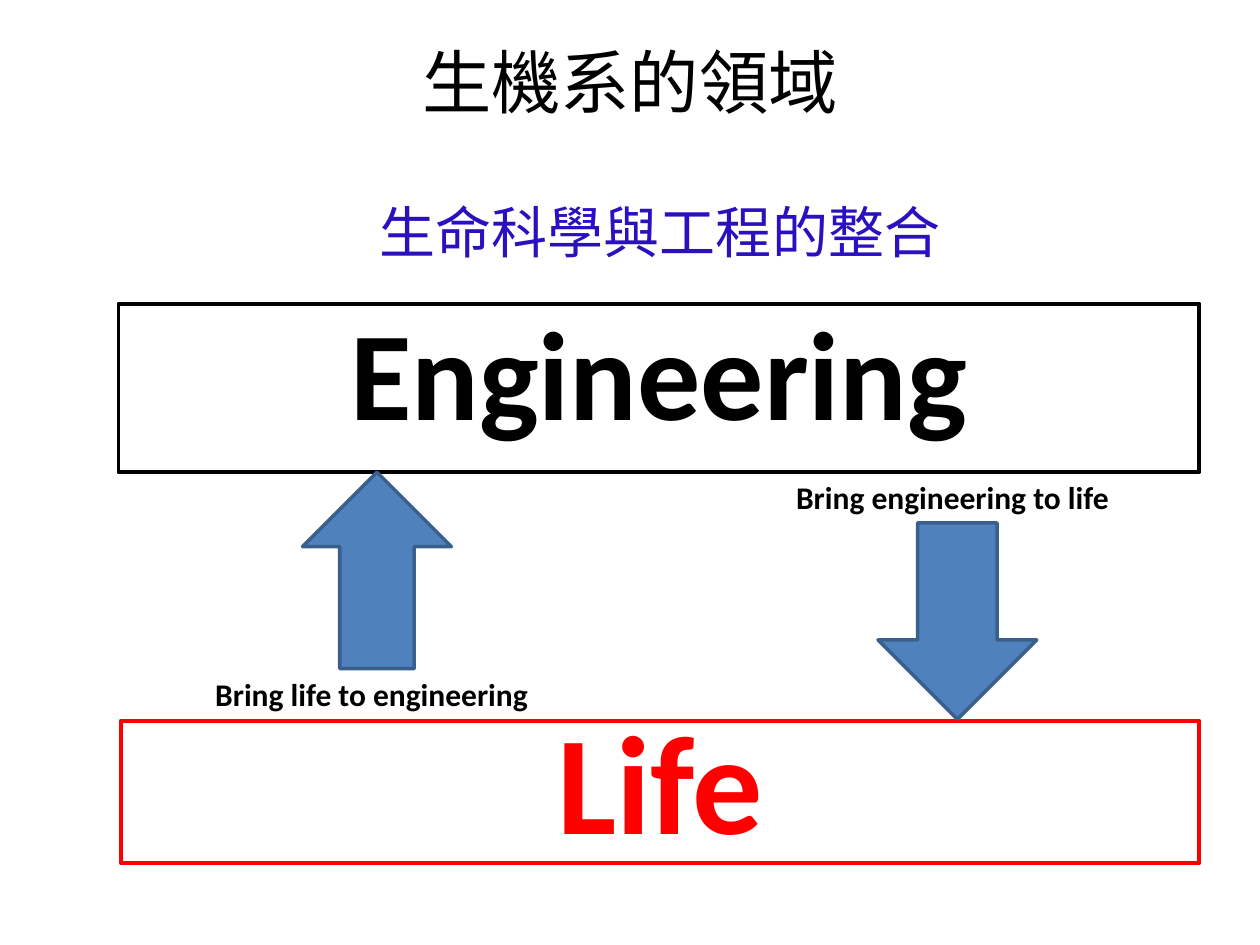
"""Build the slide on how life science and engineering are integrated."""
from lxml.etree import SubElement
from pptx import Presentation
from pptx.dml.color import RGBColor
from pptx.enum.shapes import MSO_SHAPE
from pptx.enum.text import MSO_ANCHOR, PP_ALIGN
from pptx.oxml.ns import qn
from pptx.util import Cm, Pt

COLORS = {
    "black": "000000",
    "violet": "2910C0",
    "red": "FF0000",
    "blue": "4F81BD",
    "navy": "3A5F8C",
}
CJK_FONT = "Noto Sans CJK SC"
LATIN_FONT = "Calibri"


def write(frame, text, size, color, name=LATIN_FONT, bold=True, spacing=1.0,
          align=PP_ALIGN.CENTER, **frame_format):
    for attribute, value in frame_format.items():
        setattr(frame, attribute, value)
    paragraph = frame.paragraphs[0]
    paragraph.alignment = align
    paragraph.line_spacing = spacing
    run = paragraph.add_run()
    run.text = text
    for attribute, value in {"size": Pt(size), "bold": bold, "name": name}.items():
        setattr(run.font, attribute, value)
    run.font.color.rgb = RGBColor.from_string(COLORS[color])
    SubElement(run.font._element, qn("a:ea"), typeface=name)


def draw(kind, place, line, width, fill=None):
    shape = slide.shapes.add_shape(kind, *map(Cm, place))
    shape.shadow.inherit = False
    if fill:
        shape.fill.solid()
        shape.fill.fore_color.rgb = RGBColor.from_string(COLORS[fill])
    else:
        shape.fill.background()
    shape.line.color.rgb = RGBColor.from_string(COLORS[line])
    shape.line.width = Pt(width)
    return shape


presentation = Presentation()
presentation.slide_width, presentation.slide_height = Cm(25.4), Cm(19.05)
slide = presentation.slides.add_slide(presentation.slide_layouts[6])

headings = [
    ("生機系的領域", (1.27, 0.76, 22.86, 1.75), 39.6, "black", 1.0, MSO_ANCHOR.MIDDLE),
    ("生命科學與工程的整合", (1.88, 4.11, 22.86, 1.47), 32, "violet", 0.8, MSO_ANCHOR.TOP),
]
for text, place, size, color, spacing, anchor in headings:
    heading = slide.shapes.add_textbox(*map(Cm, place))
    write(heading.text_frame, text, size, color, CJK_FONT, False, spacing,
          word_wrap=True, vertical_anchor=anchor)

fields = [
    ("Engineering", (2.39, 6.12, 21.79, 3.4), 72, "black", 0.97, 0),
    ("Life", (2.44, 14.53, 21.74, 2.87), 80, "red", 0.8, 0.13),
]
for text, place, size, color, spacing, margin in fields:
    field = draw(MSO_SHAPE.RECTANGLE, place, color, 2.25)
    write(field.text_frame, text, size, color, spacing=spacing, word_wrap=True,
          vertical_anchor=MSO_ANCHOR.TOP, margin_top=Cm(margin), margin_bottom=Cm(margin))

directions = [
    ("Bring engineering to life", (15.8, 9.52), MSO_SHAPE.DOWN_ARROW, (17.7, 10.54, 3.2, 3.96)),
    ("Bring life to engineering", (4.09, 13.49), MSO_SHAPE.UP_ARROW, (6.1, 9.52, 3, 3.96)),
]
for text, corner, arrow, place in directions:
    draw(arrow, place, "navy", 2, "blue")
    label = slide.shapes.add_textbox(*map(Cm, (*corner, 7.01, 1.02)))
    write(label.text_frame, text, 18, "black", align=PP_ALIGN.LEFT, word_wrap=False)

presentation.save("out.pptx")
